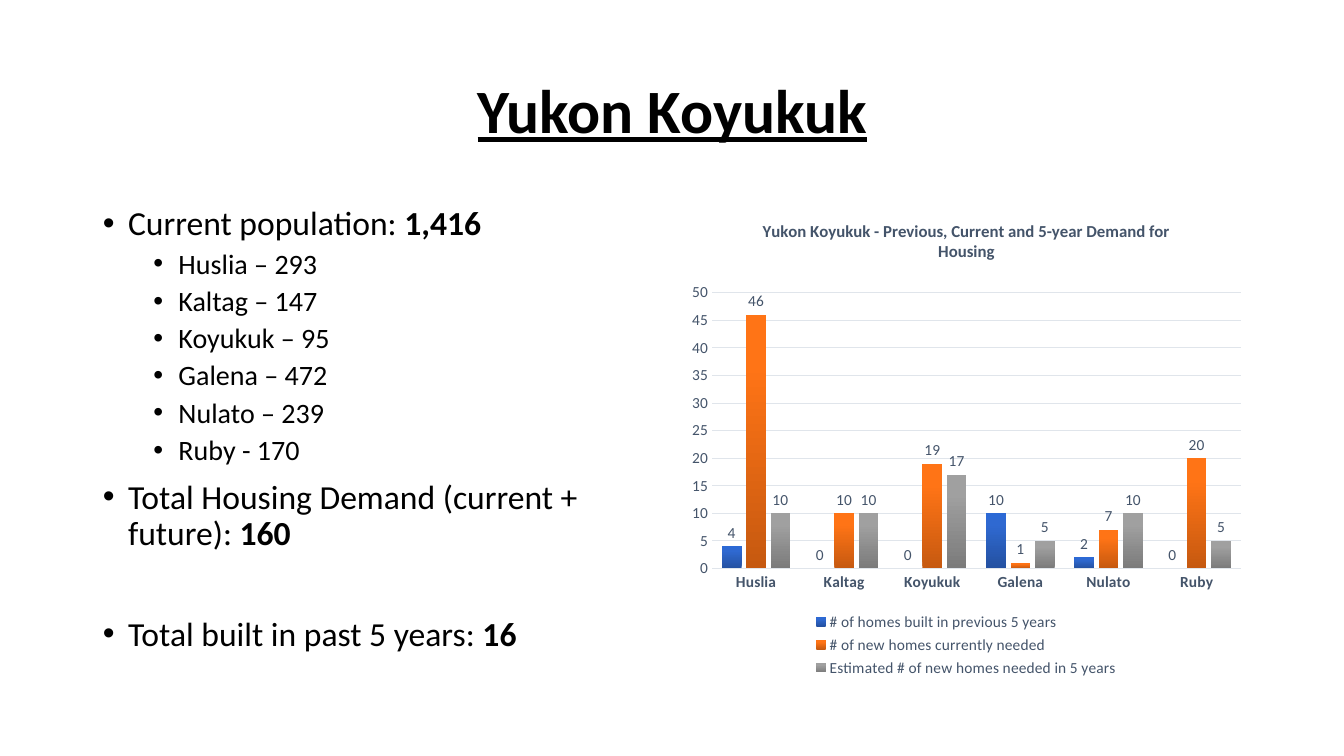
from copy import deepcopy

from lxml.etree import SubElement
from pptx import Presentation
from pptx.chart.data import CategoryChartData
from pptx.dml.color import RGBColor
from pptx.enum.chart import (XL_CHART_TYPE, XL_LABEL_POSITION,
                             XL_LEGEND_POSITION, XL_TICK_MARK)
from pptx.enum.text import MSO_ANCHOR, MSO_AUTO_SIZE, PP_ALIGN
from pptx.oxml.ns import qn
from pptx.util import Inches, Pt

BLACK = RGBColor(0x00, 0x00, 0x00)
SLATE = RGBColor(0x44, 0x54, 0x6A)
GRID = RGBColor(0xE0, 0xE5, 0xEB)
BLUES = [RGBColor(0x24, 0x51, 0xA1), RGBColor(0x2F, 0x69, 0xD1), RGBColor(0x2C, 0x69, 0xD5)]
ORANGES = [RGBColor(0xC6, 0x59, 0x10), RGBColor(0xFF, 0x74, 0x16), RGBColor(0xFF, 0x75, 0x17)]
GREYS = [RGBColor(0x7B, 0x7B, 0x7B), RGBColor(0xA0, 0xA0, 0xA0), RGBColor(0xA1, 0xA1, 0xA1)]
FONT = "Calibri"


def set_font(font, size, color, bold=False):
    font.name = FONT
    font.size = Pt(size)
    font.color.rgb = color
    font.bold = bold


def place(sp, left, top, width, height):
    sp.left, sp.top = Inches(left), Inches(top)
    sp.width, sp.height = Inches(width), Inches(height)


prs = Presentation()
prs.slide_width, prs.slide_height = Inches(13.33), Inches(7.5)
slide = prs.slides.add_slide(prs.slide_layouts[1])

# Title
title = slide.shapes.title
place(title, 0.92, 0.4, 11.5, 1.45)
tf = title.text_frame
tf.auto_size = MSO_AUTO_SIZE.NONE
tf.vertical_anchor = MSO_ANCHOR.MIDDLE
p = tf.paragraphs[0]
p.alignment = PP_ALIGN.CENTER
p.line_spacing = 0.9
r = p.add_run()
r.text = "Yukon Koyukuk"
set_font(r.font, 44, BLACK, bold=True)
r.font.underline = True

# Bullets: level, space before, text, bold figure
bullets = [
    (0, 10, "Current population: ", "1,416"),
    (1, 5, "Huslia – 293", ""),
    (1, 5, "Kaltag – 147", ""),
    (1, 5, "Koyukuk – 95", ""),
    (1, 5, "Galena – 472", ""),
    (1, 5, "Nulato – 239", ""),
    (1, 5, "Ruby - 170", ""),
    (0, 10, "Total Housing Demand (current + future): ", "160"),
    (0, 46, "Total built in past 5 years: ", "16"),
]
body = slide.placeholders[1]
place(body, 0.92, 2, 5.67, 4.76)
tf = body.text_frame
tf.auto_size = MSO_AUTO_SIZE.NONE
for i, (level, space, text, figure) in enumerate(bullets):
    p = tf.add_paragraph() if i else tf.paragraphs[0]
    p.level = level
    p.line_spacing = 0.9
    p.space_before = Pt(space)
    pPr = p._p.get_or_add_pPr()
    pPr.set("marL", str(Inches(0.25 + 0.5 * level)))
    pPr.set("indent", str(Inches(-0.25)))
    SubElement(pPr, qn("a:buFont"), typeface="Arial")
    SubElement(pPr, qn("a:buChar"), char="•")
    for part, bold in ((text, False), (figure, True)):
        if part:
            r = p.add_run()
            r.text = part
            set_font(r.font, 24 - 4 * level, BLACK, bold)

# Chart
series = [
    ("# of homes built in previous 5 years", (4, 0, 0, 10, 2, 0), BLUES),
    ("# of new homes currently needed", (46, 10, 19, 1, 7, 20), ORANGES),
    ("Estimated # of new homes needed in 5 years", (10, 10, 17, 5, 10, 5), GREYS),
]
data = CategoryChartData()
data.categories = ["Huslia", "Kaltag", "Koyukuk", "Galena", "Nulato", "Ruby"]
for name, values, _ in series:
    data.add_series(name, values)
chart = slide.shapes.add_chart(XL_CHART_TYPE.COLUMN_CLUSTERED, Inches(6.75), Inches(2),
                               Inches(5.67), Inches(4.76), data).chart
set_font(chart.font, 11, BLACK)

chart.has_title = True
r = chart.chart_title.text_frame.paragraphs[0].add_run()
r.text = "Yukon Koyukuk - Previous, Current and 5-year Demand for Housing"
set_font(r.font, 12, SLATE, bold=True)
chart.chart_title.include_in_layout = False

chart.has_legend = True
chart.legend.position = XL_LEGEND_POSITION.BOTTOM
chart.legend.include_in_layout = False
set_font(chart.legend.font, 11, SLATE)

for axis, bold in ((chart.category_axis, True), (chart.value_axis, False)):
    axis.major_tick_mark = axis.minor_tick_mark = XL_TICK_MARK.NONE
    set_font(axis.tick_labels.font, 11, SLATE, bold)
chart.value_axis.minimum_scale = 0
chart.value_axis.maximum_scale = 50
chart.value_axis.major_unit = 5
chart.value_axis.format.line.fill.background()
for line in (chart.category_axis.format.line, chart.value_axis.major_gridlines.format.line):
    line.color.rgb = GRID
    line.width = Pt(0.75)

plot = chart.plots[0]
plot.gap_width = 100
plot.overlap = -24
plot.vary_by_categories = False
for s, (_, _, colors) in zip(plot.series, series):
    fill = s.format.fill
    fill.gradient()
    fill.gradient_angle = 90
    first = s._element.find(".//" + qn("a:gs"))
    middle = deepcopy(first)
    middle.set("pos", "80000")
    first.addnext(middle)
    for stop, color in zip(fill.gradient_stops, colors):
        stop.color.rgb = color
    labels = s.data_labels
    labels.show_value = True
    labels.position = XL_LABEL_POSITION.OUTSIDE_END
    set_font(labels.font, 11, SLATE)

# Fixed inner plot area, as fractions of the chart
plot_area = chart._chartSpace.find(".//" + qn("c:plotArea"))
layout = plot_area.find(qn("c:layout"))
if layout is None:
    layout = SubElement(plot_area, qn("c:layout"))
    plot_area.insert(0, layout)
manual = SubElement(layout, qn("c:manualLayout"))
for tag, value in (("layoutTarget", "inner"), ("xMode", "edge"), ("yMode", "edge"),
                   ("x", "0.055"), ("y", "0.19"), ("w", "0.925"), ("h", "0.575")):
    SubElement(manual, qn("c:" + tag), val=value)

prs.save("out.pptx")
